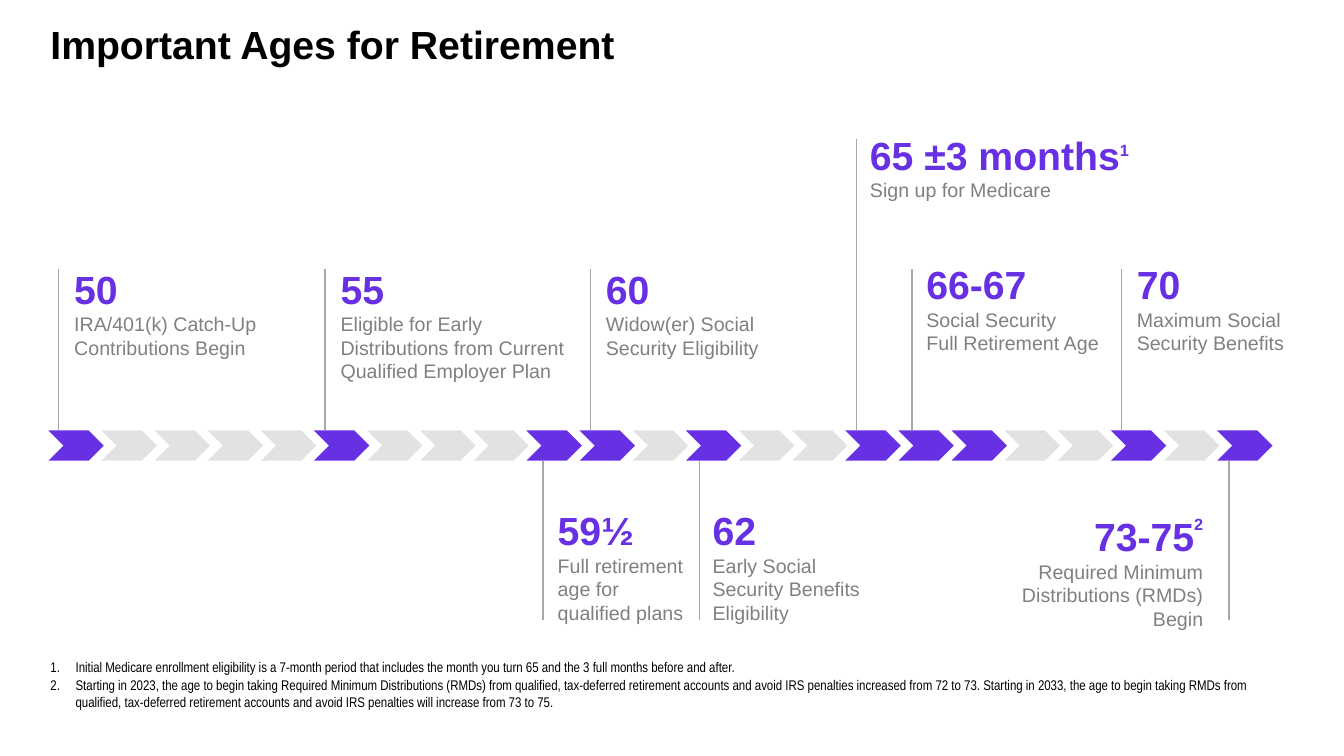
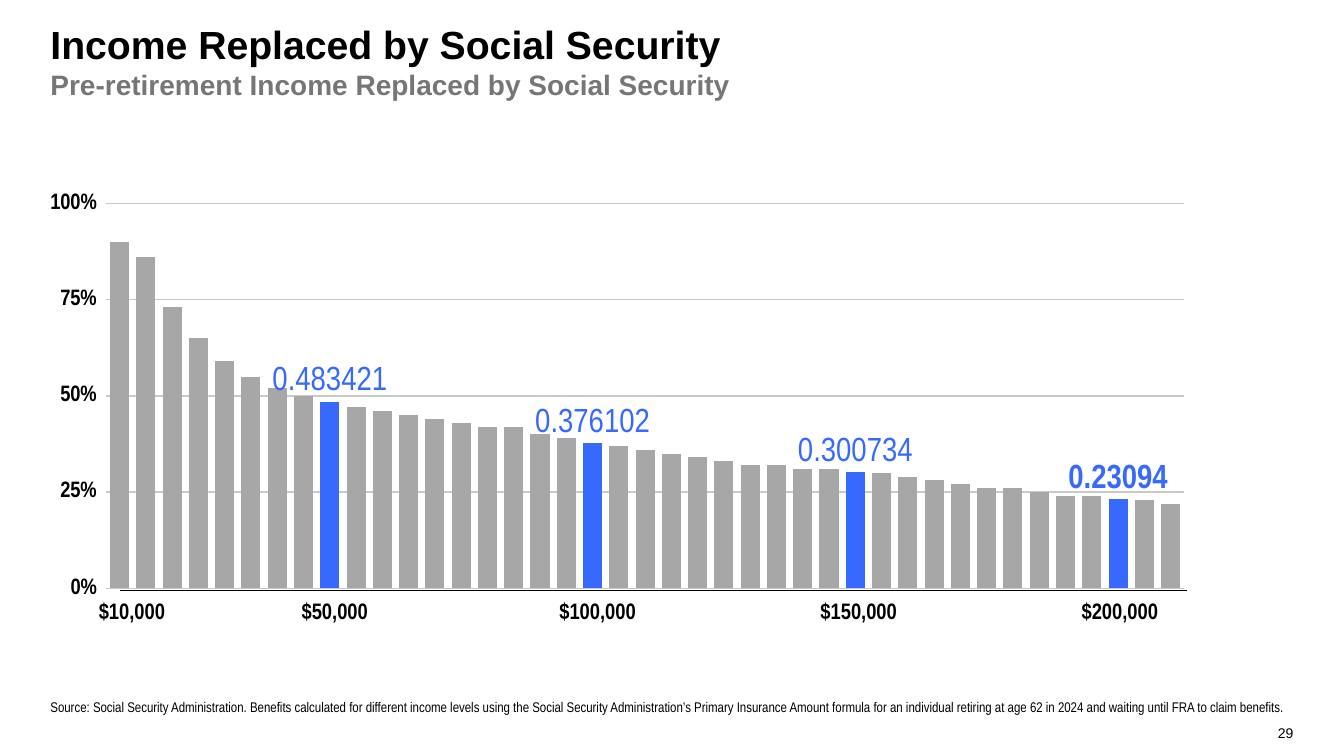
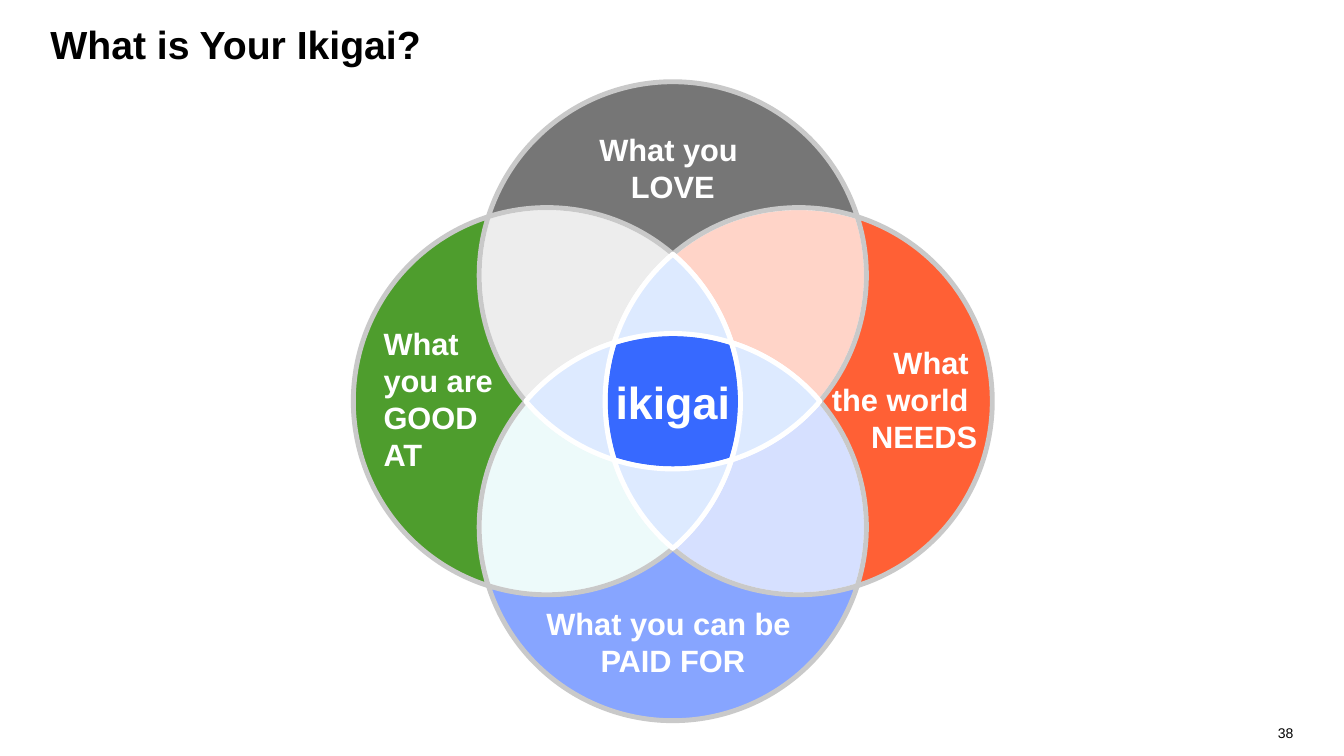
from math import atan2, cos, pi, sin, sqrt, tan

from lxml import etree
from pptx import Presentation
from pptx.chart.data import CategoryChartData
from pptx.dml.color import RGBColor
from pptx.enum.chart import XL_CHART_TYPE, XL_LABEL_POSITION, XL_TICK_MARK
from pptx.enum.shapes import MSO_CONNECTOR, MSO_SHAPE
from pptx.enum.text import MSO_ANCHOR, MSO_AUTO_SIZE, PP_ALIGN
from pptx.oxml.ns import qn
from pptx.util import Pt

BLACK = RGBColor(0x00, 0x00, 0x00)
WHITE = RGBColor(0xFF, 0xFF, 0xFF)
PURPLE = RGBColor(0x67, 0x30, 0xE3)
BLUE = RGBColor(0x37, 0x69, 0xFF)
PERIWINKLE = RGBColor(0x87, 0xA5, 0xFF)
GREEN = RGBColor(0x4E, 0x9D, 0x2D)
ORANGE = RGBColor(0xFF, 0x60, 0x35)
DARK_GRAY = RGBColor(0x76, 0x76, 0x76)
TEXT_GRAY = RGBColor(0x80, 0x80, 0x80)
MID_GRAY = RGBColor(0xA7, 0xA7, 0xA7)
RULE_GRAY = RGBColor(0xC9, 0xC9, 0xC9)
PALE_GRAY = RGBColor(0xE2, 0xE2, 0xE2)
PALE_BLUE = RGBColor(0xDD, 0xEA, 0xFF)
MIST = RGBColor(0xD9, 0xD9, 0xD9)
PEACH = RGBColor(0xFF, 0xA0, 0x86)
SKY = RGBColor(0xAF, 0xC3, 0xFF)
MINT = RGBColor(0xE1, 0xF7, 0xF7)

SANS, NARROW = "Arial", "Arial Narrow"
TITLE_BOX = (36, 14.4, 684, 61.2)
NUMBER_BOX = (895, 514.8, 28.8, 14.4)


def add_text(p, text, size, color, bold=False, font=SANS, baseline=0):
    """Add one run per line of text, with line breaks between them."""
    for i, line in enumerate(text.split("\n")):
        if i:
            p.add_line_break()
        r = p.add_run()
        r.text = line
        r.font.name, r.font.size, r.font.bold = font, Pt(size), bold
        r.font.color.rgb = color
        if baseline:
            r._r.get_or_add_rPr().set("baseline", str(baseline * 1000))


def format_frame(tf, anchor=MSO_ANCHOR.TOP, insets=(0, 0, 0, 0)):
    tf.word_wrap = True
    tf.auto_size = MSO_AUTO_SIZE.NONE
    tf.vertical_anchor = anchor
    (tf.margin_left, tf.margin_top,
     tf.margin_right, tf.margin_bottom) = [Pt(v) for v in insets]


def add_box(s, box, anchor=MSO_ANCHOR.TOP):
    tf = s.shapes.add_textbox(*[Pt(v) for v in box]).text_frame
    format_frame(tf, anchor)
    return tf


def add_line(s, x1, y1, x2, y2, color, width):
    cx = s.shapes.add_connector(
        MSO_CONNECTOR.STRAIGHT, Pt(x1), Pt(y1), Pt(x2), Pt(y2))
    cx.line.color.rgb, cx.line.width = color, Pt(width)
    etree.SubElement(cx._element.spPr, qn("a:effectLst"))


def new_slide(prs, title, subtitle=None, number=None):
    s = prs.slides.add_slide(prs.slide_layouts[5])
    sp = s.shapes.title
    sp.left, sp.top, sp.width, sp.height = [Pt(v) for v in TITLE_BOX]
    tf = sp.text_frame
    format_frame(tf)
    add_text(tf.paragraphs[0], title, 28, BLACK, True)
    if subtitle:
        add_text(tf.add_paragraph(), subtitle, 20, DARK_GRAY, True)
    for p in tf.paragraphs:
        p.alignment = PP_ALIGN.LEFT
    if number:
        p = add_box(s, NUMBER_BOX, MSO_ANCHOR.BOTTOM).paragraphs[0]
        p.alignment = PP_ALIGN.RIGHT
        add_text(p, number, 10, BLACK)
    return s


def add_footnotes(s, box, notes, numbered=False):
    tf = add_box(s, box, MSO_ANCHOR.BOTTOM)
    for i, note in enumerate(notes):
        p = tf.add_paragraph() if i else tf.paragraphs[0]
        if numbered:
            pPr = p._p.get_or_add_pPr()
            pPr.set("marL", str(Pt(18)))
            pPr.set("indent", str(-Pt(18)))
            etree.SubElement(pPr, qn("a:buAutoNum"), type="arabicPeriod")
        p.space_after = Pt(1.5)
        add_text(p, note, 10, BLACK, font=NARROW)


# Ages timeline

FIRST_AGE, LAST_AGE = 50, 72
KEY_AGES = {50, 55, 59, 60, 62, 65, 66, 67, 70, 72}
CHEVRON_W, CHEVRON_H = 39.6, 21.6
AXIS_TOP = 217.5
UP, TALL, DOWN = 102, 9.4, 353

# stem x, stem end, text left, text top, text width, age, note mark, text
MILESTONES = [
    (7.3, UP, 18.5, 99.4, 169, "50", None,
     "IRA/401(k) Catch-Up Contributions Begin"),
    (197.7, UP, 208.8, 99.4, 177, "55", None,
     "Eligible for Early Distributions from Current Qualified Employer Plan"),
    (353.5, DOWN, 363.9, 272, 97, "59½", None,
     "Full retirement age for qualified plans"),
    (387.5, UP, 398.3, 99.4, 126, "60", None,
     "Widow(er) Social Security Eligibility"),
    (465.2, DOWN, 474.5, 272, 112, "62", None,
     "Early Social Security Benefits Eligibility"),
    (577.5, TALL, 586.9, 3.6, 205, "65 ±3 months", ("1", 50),
     "Sign up for Medicare"),
    (616.9, UP, 627.2, 96, 129, "66-67", None,
     "Social Security \nFull Retirement Age"),
    (766.5, UP, 777.5, 96, 122, "70", None,
     "Maximum Social Security Benefits"),
    (843.5, DOWN, 686, 276, 139, "73-75", ("2", 75),
     "Required Minimum Distributions (RMDs) Begin"),
]


def add_milestone(s, x, y, stem_x, stem_end, left, top, width, age, mark, text):
    start = AXIS_TOP + (CHEVRON_H if stem_end > AXIS_TOP else 0)
    add_line(s, x + stem_x, y + start, x + stem_x, y + stem_end, MID_GRAY, 1)
    tf = add_box(s, (x + left, y + top, width, 93.6))
    p = tf.paragraphs[0]
    add_text(p, age, 28, PURPLE, True)
    if mark:
        add_text(p, mark[0], 20, PURPLE, True, baseline=mark[1])
    add_text(tf.add_paragraph(), text, 14, TEXT_GRAY)
    if left < stem_x:
        for p in tf.paragraphs:
            p.alignment = PP_ALIGN.RIGHT


def add_timeline(s, x, y, w):
    for milestone in MILESTONES:
        add_milestone(s, x, y, *milestone)
    pitch = (w - CHEVRON_W) / (LAST_AGE - FIRST_AGE)
    for age in range(FIRST_AGE, LAST_AGE + 1):
        sp = s.shapes.add_shape(
            MSO_SHAPE.CHEVRON, Pt(x + (age - FIRST_AGE) * pitch),
            Pt(y + AXIS_TOP), Pt(CHEVRON_W), Pt(CHEVRON_H))
        sp.shadow.inherit = False
        sp.fill.solid()
        sp.fill.fore_color.rgb = PURPLE if age in KEY_AGES else PALE_GRAY
        sp.line.fill.background()


# Income chart

REPLACED = [
    0.9, 0.86, 0.73, 0.65, 0.59, 0.55, 0.52, 0.5, 0.483421, 0.47,
    0.46, 0.45, 0.44, 0.43, 0.42, 0.42, 0.4, 0.39, 0.376102, 0.37,
    0.36, 0.35, 0.34, 0.33, 0.32, 0.32, 0.31, 0.31, 0.300734, 0.3,
    0.29, 0.28, 0.27, 0.26, 0.26, 0.25, 0.24, 0.24, 0.23094, 0.23, 0.22]
LABELLED = (8, 18, 28, 38)
INCOMES = [("$10,000", 34.6), ("$50,000", 179.5), ("$100,000", 363.6),
           ("$150,000", 550.1), ("$200,000", 736.6)]


def set_plot_layout(chart, x, y, w, h):
    """Fix the inner plot area, in fractions of the chart."""
    area = chart._chartSpace.chart.plotArea
    for old in area.findall(qn("c:layout")):
        area.remove(old)
    layout = etree.Element(qn("c:layout"))
    manual = etree.SubElement(layout, qn("c:manualLayout"))
    for tag, val in [("layoutTarget", "inner"), ("xMode", "edge"),
                     ("yMode", "edge"), ("x", x), ("y", y), ("w", w), ("h", h)]:
        etree.SubElement(manual, qn("c:" + tag), val=str(val))
    area.insert(0, layout)


def add_income_chart(s, x, y, w, h):
    data = CategoryChartData()
    data.categories = [str(i + 1) for i in range(len(REPLACED))]
    data.add_series("Series 1", REPLACED)
    chart = s.shapes.add_chart(XL_CHART_TYPE.COLUMN_CLUSTERED,
                               Pt(x), Pt(y), Pt(w), Pt(h), data).chart
    chart.has_legend = chart.has_title = False
    chart.font.name, chart.font.size = NARROW, Pt(13)
    chart.font.color.rgb = BLACK
    set_plot_layout(chart, 0.047, 0.02, 0.95, 0.94)

    chart.category_axis.visible = False
    axis = chart.value_axis
    axis.minimum_scale, axis.maximum_scale, axis.major_unit = 0, 1, 0.25
    axis.major_tick_mark = XL_TICK_MARK.OUTSIDE
    axis.format.line.fill.background()
    axis.major_gridlines.format.line.color.rgb = RULE_GRAY
    axis.major_gridlines.format.line.width = Pt(1)
    labels = axis.tick_labels
    labels.number_format, labels.number_format_is_linked = "0%", False
    labels.font.name, labels.font.size, labels.font.bold = NARROW, Pt(16), True
    labels.font.color.rgb = BLACK

    plot = chart.plots[0]
    plot.vary_by_categories = False
    plot.gap_width, plot.overlap = 38, -2
    series = plot.series[0]
    series.format.fill.solid()
    series.format.fill.fore_color.rgb = MID_GRAY
    for i in LABELLED:
        point = series.points[i]
        point.format.fill.solid()
        point.format.fill.fore_color.rgb = BLUE
        font = point.data_label.font
        font.name, font.size, font.bold = NARROW, Pt(24), i == LABELLED[-1]
        font.color.rgb = BLUE
        point.data_label.position = XL_LABEL_POSITION.OUTSIDE_END

    for text, left in INCOMES:
        tf = add_box(s, (x + left, y + h - 5.5, 64, 22))
        add_text(tf.paragraphs[0], text, 16, BLACK, True, NARROW)
    add_line(s, x + 49.7, y + h - 10.2, x + w, y + h - 10.2, BLACK, 0.75)


# Four-circle diagram

def arc_curves(start, end, center, radius):
    """Two Bezier curves, as point triples, for the shorter arc."""
    cx, cy = center
    a = atan2(start[1] - cy, start[0] - cx)
    half = ((atan2(end[1] - cy, end[0] - cx) - a + pi) % (2 * pi) - pi) / 2
    k = 4 / 3 * tan(half / 4)

    def on_tangent(angle, reach):
        return (cx + radius * (cos(angle) - reach * sin(angle)),
                cy + radius * (sin(angle) + reach * cos(angle)))

    return [(on_tangent(b, k), on_tangent(b + half, -k),
             on_tangent(b + half, 0)) for b in (a, a + half)]


def turn(point, quarters):
    for _ in range(quarters):
        point = (-point[1], point[0])
    return point


def bend_segments(sp, curves):
    """Turn the straight segments of a freeform into curves."""
    for line, curve in zip(list(sp._element.iter(qn("a:lnTo"))), curves):
        line.tag = qn("a:cubicBezTo")
        line.remove(line[0])
        for px, py in curve:
            etree.SubElement(line, qn("a:pt"), x=str(px - sp.left),
                             y=str(py - sp.top))


def add_region(s, middle, radius, region, quarters, color, line, alpha=None):
    """Draw a region given as (corner, centre of the arc to the next corner)."""
    corners = [turn(corner, quarters) for corner, _ in region]
    centers = [turn(center, quarters) for _, center in region]
    curves = []
    for start, end, center in zip(corners, corners[1:] + corners[:1], centers):
        curves += arc_curves(start, end, center, radius)
    curves = [[(Pt(middle[0] + px), Pt(middle[1] + py)) for px, py in curve]
              for curve in curves]
    fb = s.shapes.build_freeform(*curves[-1][-1])
    fb.add_line_segments([curve[-1] for curve in curves], close=True)
    sp = fb.convert_to_shape()
    bend_segments(sp, curves)
    sp.shadow.inherit = False
    sp.fill.solid()
    sp.fill.fore_color.rgb = color
    if alpha:
        rgb = sp._element.spPr.find(qn("a:solidFill"))[0]
        etree.SubElement(rgb, qn("a:alpha"), val=str(alpha * 1000))
    sp.line.color.rgb, sp.line.width = line, Pt(3.5)
    return sp


def label_region(sp, text, size, align, insets):
    format_frame(sp.text_frame, MSO_ANCHOR.MIDDLE, insets)
    p = sp.text_frame.paragraphs[0]
    p.alignment = align
    add_text(p, text, size, WHITE, True)


# clockwise from the top-left
OVERLAPS = [(MIST, 47), (PEACH, 45), (SKY, 51), (MINT, 58)]
# clockwise from the top
OUTER = [
    (DARK_GRAY, "What you \nLOVE", PP_ALIGN.CENTER, (7.2, 3.6, 7.2, 3.6)),
    (ORANGE, "What \nthe world \nNEEDS", PP_ALIGN.RIGHT, (7.2, 0, 10.8, 3.6)),
    (PERIWINKLE, "What you can be \nPAID FOR", PP_ALIGN.CENTER,
     (7.2, 14.4, 7.2, 3.6)),
    (GREEN, "What \nyou are \nGOOD \nAT", PP_ALIGN.LEFT, (21.6, 0, 7.2, 3.6)),
]


def add_ikigai(s, x, y, side):
    middle = (x + side / 2, y + side / 2)
    radius, shift = side * 0.303, side * 0.197
    top, right, bottom, left = [turn((0, -shift), k) for k in range(4)]
    # crossings of opposite circles, then of neighbouring ones
    tip = sqrt(radius ** 2 - shift ** 2)
    root = sqrt(2 * radius ** 2 - shift ** 2)
    near, far = (root - shift) / 2, (root + shift) / 2

    overlap = [((-tip, 0), bottom), ((-near, -near), right),
               ((0, -tip), left), ((-far, -far), top)]
    core = [((near, -near), bottom), ((-near, -near), right),
            ((-near, near), top), ((near, near), left)]
    outer = [((0, -tip), right), ((far, -far), top), ((-far, -far), left)]
    petal = [((near, -near), left), ((0, -tip), right),
             ((-near, -near), bottom)]

    for k, (color, alpha) in enumerate(OVERLAPS):
        add_region(s, middle, radius, overlap, k, color, WHITE, alpha)
    sp = add_region(s, middle, radius, core, 0, BLUE, WHITE)
    label_region(sp, "ikigai", 32, PP_ALIGN.CENTER, (0, 3.6, 0, 3.6))
    for k, (color, text, align, insets) in enumerate(OUTER):
        sp = add_region(s, middle, radius, outer, k, color, RULE_GRAY)
        label_region(sp, text, 22, align, insets)
    for k in range(4):
        add_region(s, middle, radius, petal, k, PALE_BLUE, WHITE)


def main():
    prs = Presentation()
    prs.slide_width, prs.slide_height = Pt(960), Pt(540)

    s = new_slide(prs, "Important Ages for Retirement")
    add_timeline(s, 34.5, 90, 874.5)
    add_footnotes(s, (36, 469.4, 888, 38.2), [
        "Initial Medicare enrollment eligibility is a 7-month period that "
        "includes the month you turn 65 and the 3 full months before and after.",
        "Starting in 2023, the age to begin taking Required Minimum "
        "Distributions (RMDs) from qualified, tax-deferred retirement accounts "
        "and avoid IRS penalties increased from 72 to 73. Starting in 2033, the "
        "age to begin taking RMDs from qualified, tax-deferred retirement "
        "accounts and avoid IRS penalties will increase from 73 to 75.",
    ], numbered=True)

    s = new_slide(prs, "Income Replaced by Social Security",
                  "Pre-retirement Income Replaced by Social Security", "29")
    add_income_chart(s, 36, 138.2, 812, 293.8)
    add_footnotes(s, (36, 499, 888, 12.2), [
        "Source: Social Security Administration. Benefits calculated for "
        "different income levels using the Social Security Administration’s "
        "Primary Insurance Amount formula for an individual retiring at age 62 "
        "in 2024 and waiting until FRA to claim benefits."])

    s = new_slide(prs, "What is Your Ikigai?", number="38")
    add_ikigai(s, 252.4, 58.4, 456.4)

    prs.save("out.pptx")


if __name__ == "__main__":
    main()
